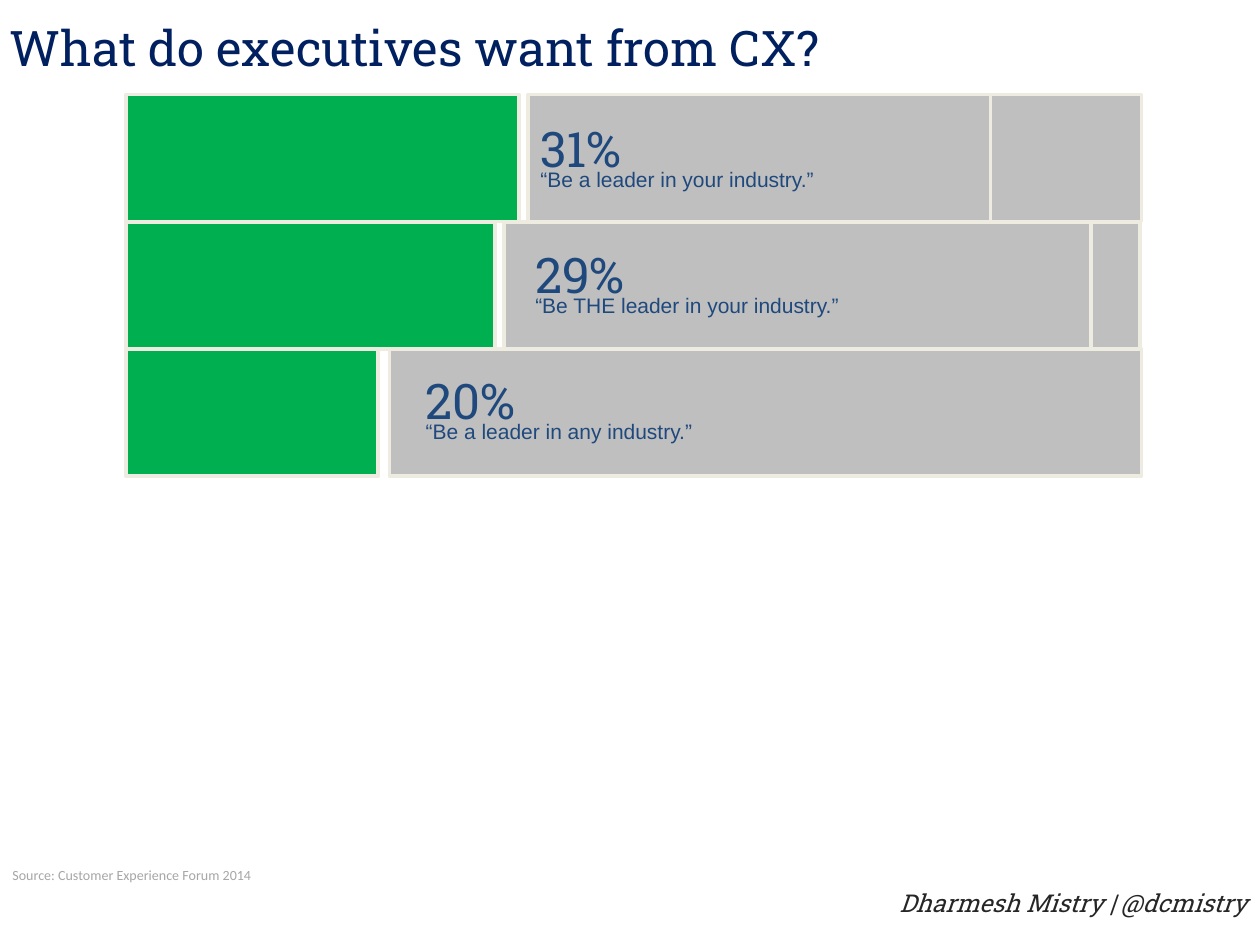
from pptx import Presentation
from pptx.dml.color import RGBColor
from pptx.enum.shapes import MSO_SHAPE as SHAPE
from pptx.enum.text import MSO_ANCHOR as ANCHOR, MSO_AUTO_SIZE as AUTO_SIZE, PP_ALIGN as ALIGN
from pptx.util import Inches, Pt

COLORS = {
    "title": "002060",
    "source": "A6A6A6",
    "label": "1F497D",
    "author": "262626",
    "share": "00B050",
    "rest": "BFBFBF",
    "border": "EEECE1",
}
SLAB = "Roboto Slab"

prs = Presentation()
prs.slide_width, prs.slide_height = Inches(10), Inches(7.5)
slide = prs.slides.add_slide(prs.slide_layouts[6])


def add_text(text, left, top, width, height, size, font, color, wrap=True):
    frame = slide.shapes.add_textbox(
        Inches(left), Inches(top), Inches(width), Inches(height)).text_frame
    frame.word_wrap = wrap
    if not wrap:
        frame.auto_size = AUTO_SIZE.SHAPE_TO_FIT_TEXT
    paragraph = frame.paragraphs[0]
    paragraph.text = text
    paragraph.font.size = Pt(size)
    paragraph.font.name = font
    paragraph.font.color.rgb = RGBColor.from_string(COLORS[color])
    return frame


def add_bar(left, top, right, color):
    bar = slide.shapes.add_shape(
        SHAPE.RECTANGLE, Inches(left), Inches(top), Inches(right - left), Inches(ROW_HEIGHT))
    bar.shadow.inherit = False
    bar.fill.solid()
    bar.fill.fore_color.rgb = RGBColor.from_string(COLORS[color])
    bar.line.color.rgb = RGBColor.from_string(COLORS["border"])
    bar.line.width = Pt(2)


title = add_text("What do executives want from CX?", -0.02, 0, 9.5, 0.75, 28, SLAB, "title")
title.vertical_anchor = ANCHOR.MIDDLE
add_text("Source: Customer Experience Forum 2014", 0, 6.83, 2.69, 0.24, 8, "Calibri", "source")

ROW_TOP, ROW_HEIGHT, BAR_LEFT = 0.75, 1.01, 1
# percentage, answer, end of green bar, edges of grey bars, label left, answer width
answers = [
    ("31%", "“Be a leader in your industry.”", 4.12, (4.19, 7.86, 9.06), 4.19, 2.39),
    ("29%", "“Be THE leader in your industry.”", 3.93, (4, 8.66, 9.05), 4.15, 2.63),
    ("20%", "“Be a leader in any industry.”", 3, (3.09, 9.06), 3.28, 2.34),
]
for row, (percent, answer, share_end, rest_edges, label_left, answer_width) in enumerate(answers):
    top = ROW_TOP + row * ROW_HEIGHT
    for left, right in zip(rest_edges, rest_edges[1:]):
        add_bar(left, top, right, "rest")
    add_bar(BAR_LEFT, top, share_end, "share")
    label_top = 0.89 + row
    add_text(percent, label_left, label_top, 1.01, 0.57, 28, SLAB, "label", wrap=False)
    add_text(answer, label_left, label_top + 0.38, answer_width, 0.3, 12, "Arial", "label", wrap=False)

author = add_text("Dharmesh Mistry | @dcmistry", 4.33, 7, 5.67, 0.5, 14, SLAB, "author").paragraphs[0]
author.alignment = ALIGN.RIGHT
author.font.italic = True

prs.save("out.pptx")
